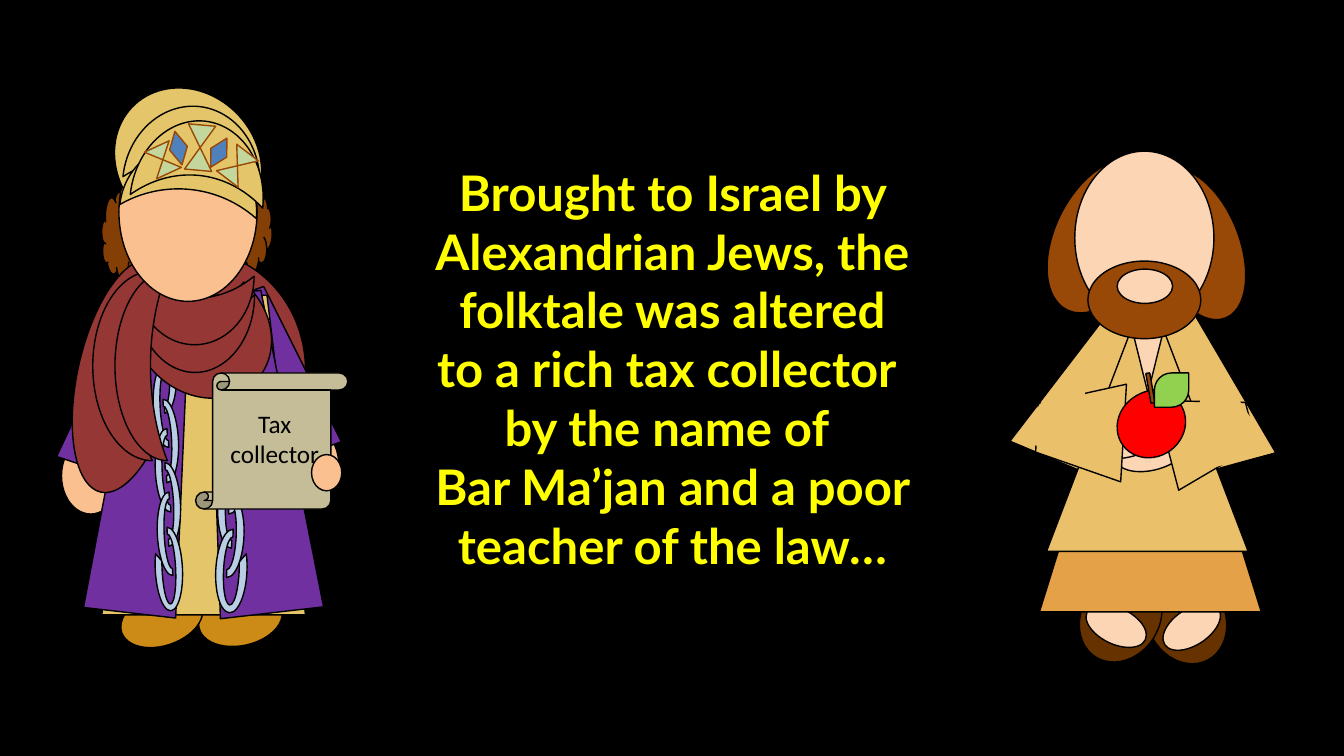
from pptx import Presentation
from pptx.dml.color import RGBColor
from pptx.enum import shapes, text
from pptx.util import Inches, Pt

K = shapes.MSO_SHAPE
BLACK = RGBColor(0x00, 0x00, 0x00)
YELLOW = RGBColor(0xFF, 0xFF, 0x00)
RED = RGBColor(0xFF, 0x00, 0x00)
GREEN = RGBColor(0x92, 0xD0, 0x50)
HAIR = RGBColor(0x98, 0x48, 0x07)
CURLS = RGBColor(0x84, 0x3F, 0x06)
SANDAL = RGBColor(0x66, 0x33, 0x00)
SHOE = RGBColor(0xCC, 0x8B, 0x16)
PALE = RGBColor(0xFC, 0xD5, 0xB5)
SKIN = RGBColor(0xFA, 0xC0, 0x90)
HEM = RGBColor(0xE4, 0xA1, 0x48)
ROBE = RGBColor(0xEB, 0xC0, 0x6B)
GOLD = RGBColor(0xE5, 0xC5, 0x69)
PURPLE = RGBColor(0x70, 0x30, 0xA0)
SCARF = RGBColor(0x95, 0x37, 0x35)
CHAIN = RGBColor(0xB9, 0xCD, 0xE5)
JADE = RGBColor(0xC3, 0xD6, 0x9B)
SAPPHIRE = RGBColor(0x4F, 0x81, 0xBD)
PARCHMENT = RGBColor(0xC4, 0xBD, 0x97)

STORY = [
    "Brought to Israel by Alexandrian Jews, the folktale was altered "
    "to a rich tax collector ",
    "by the name of ",
    "Bar Ma’jan and a poor teacher of the law…",
]
SCROLL_LABEL = ["Tax collector"]

# Each part: kind, fill, (left, top, width, height), rotation, options
TEACHER = [
    # Feet
    (K.OVAL, SANDAL, (11.38, 5.67, 0.77, 0.93), 333.4, {}),
    (K.OVAL, PALE, (11.5, 6.04, 0.64, 0.36), 326.6, {}),
    (K.OVAL, SANDAL, (10.73, 5.66, 0.77, 0.93), 32.4, {}),
    (K.OVAL, PALE, (10.75, 6.03, 0.64, 0.36), 25.7, {}),
    # Robe
    (K.ISOSCELES_TRIANGLE, HEM, (10.31, 2.54, 2.2, 3.53), 0, {}),
    (K.TRAPEZOID, ROBE, (10.29, 3.02, 1.28, 1.67), 22.8, {"adj": [0.342]}),
    (K.TRAPEZOID, ROBE, (11.11, 2.99, 1.34, 1.71), 344.6, {"adj": [0.342], "flip": True}),
    (K.ISOSCELES_TRIANGLE, ROBE, (10.38, 2.85, 2, 2.62), 0, {}),
    # Hair, hands, neck and head
    (K.OVAL, HAIR, (11.08, 2, 1.57, 0.85), 68.3, {}),
    (K.OVAL, HAIR, (10.13, 1.86, 1.64, 0.96), 116.7, {}),
    (K.OVAL, PALE, (11.05, 4.25, 0.77, 0.41), 343.8, {}),
    (K.OVAL, PALE, (10.67, 4.14, 0.77, 0.41), 0, {}),
    (K.ISOSCELES_TRIANGLE, PALE, (11.08, 2.67, 0.61, 1.23), 180, {}),
    (K.OVAL, PALE, (10.66, 1.5, 1.38, 1.72), 0, {}),
    # Sleeves
    (K.TRAPEZOID, ROBE, (10.23, 3.84, 0.97, 0.86), 273.4, {"adj": [0.284]}),
    (K.TRAPEZOID, ROBE, (11.53, 3.88, 0.92, 0.86), 75.4, {"adj": [0.284]}),
    (K.TRAPEZOID, ROBE, (10.21, 3.64, 0.64, 0.85), 22.8, {"adj": [0.342], "line": None}),
    (K.TRAPEZOID, ROBE, (11.74, 3.86, 0.81, 0.74), 345.9, {"adj": [0.342], "line": None}),
    # Beard and mouth
    (K.OVAL, HAIR, (10.79, 2.59, 1.12, 0.77), 180, {}),
    (K.OVAL, PALE, (11.08, 2.67, 0.55, 0.34), 0, {}),
]
APPLE = [
    (K.TEAR, RED, (11.07, 3.89, 0.7, 0.64), 323.4, {"adj": [0.754]}),
    (K.ROUNDED_RECTANGLE, HAIR, (11.39, 3.7, 0.04, 0.3), 350.2, {}),
    (K.ROUND_2_DIAG_RECTANGLE, GREEN, (11.45, 3.7, 0.34, 0.34), 0, {"adj": [0.5, 0]}),
]


def chain(left, drift, sway, height, turn, flip):
    """Links hang in alternating directions; the last one lies under its neighbour."""
    tops = [3.21, 3.55, 3.89, 4.24, 4.53, 4.87, 5.16, 5.51]
    ends = {0: [24.165, 0, 0.25], 7: [22.948, 0, 0.25]}
    links = []
    for i in (0, 1, 2, 3, 4, 5, 7, 6):
        x = left + drift * (i // 2) + sway * (i % 2)
        links.append((K.BLOCK_ARC, CHAIN, (x, tops[i], 0.83, height),
                      (turn + 180 * (i % 2)) % 360,
                      {"adj": ends.get(i, []), "flip": flip}))
    return links


COLLECTOR = [
    # Hair, shoes, hands and shoulders
    (K.CLOUD, CURLS, (1.01, 1.88, 0.4, 0.89), 0, {}),
    (K.CLOUD, CURLS, (2.3, 1.96, 0.4, 0.74), 0, {}),
    (K.OVAL, SHOE, (2.12, 5.72, 0.53, 0.84), 77.7, {}),
    (K.OVAL, SHOE, (1.34, 5.72, 0.53, 0.84), 71.2, {}),
    (K.OVAL, SKIN, (0.61, 4.34, 0.58, 0.76), 0, {}),
    (K.OVAL, SKIN, (2.78, 4.23, 0.58, 0.76), 0, {}),
    (K.OVAL, SCARF, (0.85, 2.49, 2.18, 2.36), 0, {}),
    # Sleeves, robe and coat with chains
    (K.TRAPEZOID, PURPLE, (2.31, 2.86, 0.81, 1.71), 340.2, {}),
    (K.TRAPEZOID, PURPLE, (0.81, 2.99, 0.81, 1.71), 18.3, {}),
    (K.TRAPEZOID, GOLD, (1.01, 2.93, 2.02, 3.17), 0, {"adj": [0.189]}),
    (K.TRAPEZOID, PURPLE, (2, 2.9, 1.03, 3.19), 353.4, {}),
    *chain(1.91, -0.02, 0.03, 0.31, 92.6, False),
    (K.TRAPEZOID, PURPLE, (1.01, 2.88, 0.92, 3.21), 6.6, {"flip": True}),
    *chain(1.22, 0.02, -0.02, 0.27, 267.4, True),
    # Neck and scarf
    (K.TRAPEZOID, SKIN, (1.63, 2.93, 0.65, 0.22), 180, {}),
    (K.PIE, SCARF, (1.37, 2.53, 1.26, 1.48), 311.6, {}),
    (K.MOON, SCARF, (1.55, 2.72, 0.77, 1.18), 270, {"adj": [0.677]}),
    (K.MOON, SCARF, (1.59, 2.49, 0.68, 1.18), 270, {"adj": [0.677]}),
    (K.PIE, SCARF, (0.77, 2.55, 0.97, 2.36), 12.5, {"adj": [30.576, 162]}),
    (K.MOON, SCARF, (0.92, 2.69, 0.59, 1.88), 0, {"adj": [0.677]}),
    (K.MOON, SCARF, (1.14, 2.69, 0.52, 1.88), 0, {"adj": [0.677]}),
    # Head and turban
    (K.OVAL, SKIN, (1.18, 1.22, 1.37, 1.77), 0, {}),
    (K.PIE, GOLD, (1.18, 0.83, 1.37, 1.56), 137.5, {"adj": [11.729, 156.797]}),
    (K.MOON, GOLD, (1.55, 0.76, 0.77, 1.36), 95.9, {"adj": [0.677]}),
    (K.MOON, GOLD, (1.56, 1.08, 0.68, 1.36), 95.9, {"adj": [0.677]}),
    (K.MOON, GOLD, (1.59, 0.94, 0.8, 1.32), 95.9, {"adj": [0.677]}),
    # Jewels
    (K.FLOWCHART_COLLATE, JADE, (1.48, 1.44, 0.27, 0.29), 335.3, {"line": HAIR}),
    (K.FLOWCHART_COLLATE, JADE, (2.22, 1.48, 0.27, 0.33), 37.5, {"line": HAIR}),
    (K.FLOWCHART_COLLATE, JADE, (1.85, 1.24, 0.27, 0.45), 5.1, {"line": HAIR}),
    (K.DIAMOND, SAPPHIRE, (1.68, 1.3, 0.18, 0.34), 348.1, {"line": HAIR}),
    (K.DIAMOND, SAPPHIRE, (2.08, 1.35, 0.18, 0.33), 29.2, {"line": HAIR}),
    # Scroll and the hand holding it
    (K.VERTICAL_SCROLL, PARCHMENT, (1.94, 3.7, 1.51, 1.35), 0, {}),
    (K.OVAL, SKIN, (3.09, 4.51, 0.3, 0.36), 0, {}),
]


def add_part(parent, kind, fill, box, rotation=0, adj=(), flip=False, line=BLACK, width=1):
    sp = parent.add_shape(kind, *map(Inches, box))
    sp.shadow.inherit = False
    sp.rotation = rotation
    for i, value in enumerate(adj):
        sp.adjustments[i] = value
    if flip:
        sp.element.spPr.xfrm.set("flipH", "1")
    if fill is None:
        sp.fill.background()
    else:
        sp.fill.solid()
        sp.fill.fore_color.rgb = fill
    if line is None:
        sp.line.fill.background()
    else:
        sp.line.color.rgb = line
        sp.line.width = Pt(width)
    return sp


def add_figure(parent, parts):
    group = parent.add_group_shape()
    for kind, fill, box, rotation, options in parts:
        add_part(group.shapes, kind, fill, box, rotation, **options)
    return group


def write(sp, lines, font, size, color, bold=False):
    tf = sp.text_frame
    tf.word_wrap = True
    for i, line in enumerate(lines):
        p = tf.add_paragraph() if i else tf.paragraphs[0]
        p.text = line
        p.alignment = text.PP_ALIGN.CENTER
        p.font.name, p.font.size, p.font.bold = font, Pt(size), bold
        p.font.color.rgb = color


prs = Presentation()
prs.slide_width, prs.slide_height = Inches(13.33), Inches(7.5)
s = prs.slides.add_slide(prs.slide_layouts[6])

# Backdrop and story
add_part(s.shapes, K.RECTANGLE, BLACK, (0, 0, 13.33, 7.5))
story = add_part(s.shapes, K.RECTANGLE, None, (4.17, 1.56, 5, 4.22), width=0.75)
story.text_frame.vertical_anchor = text.MSO_ANCHOR.TOP
write(story, STORY, "Lato", 35, YELLOW, bold=True)

# Figures
add_figure(s.shapes, TEACHER)
add_figure(s.shapes, APPLE)
collector = add_figure(s.shapes, COLLECTOR)
label = collector.shapes.add_textbox(*map(Inches, (2.14, 4, 1.17, 0.71)))
write(label, SCROLL_LABEL, "Calibri", 18, BLACK)

prs.save("out.pptx")
